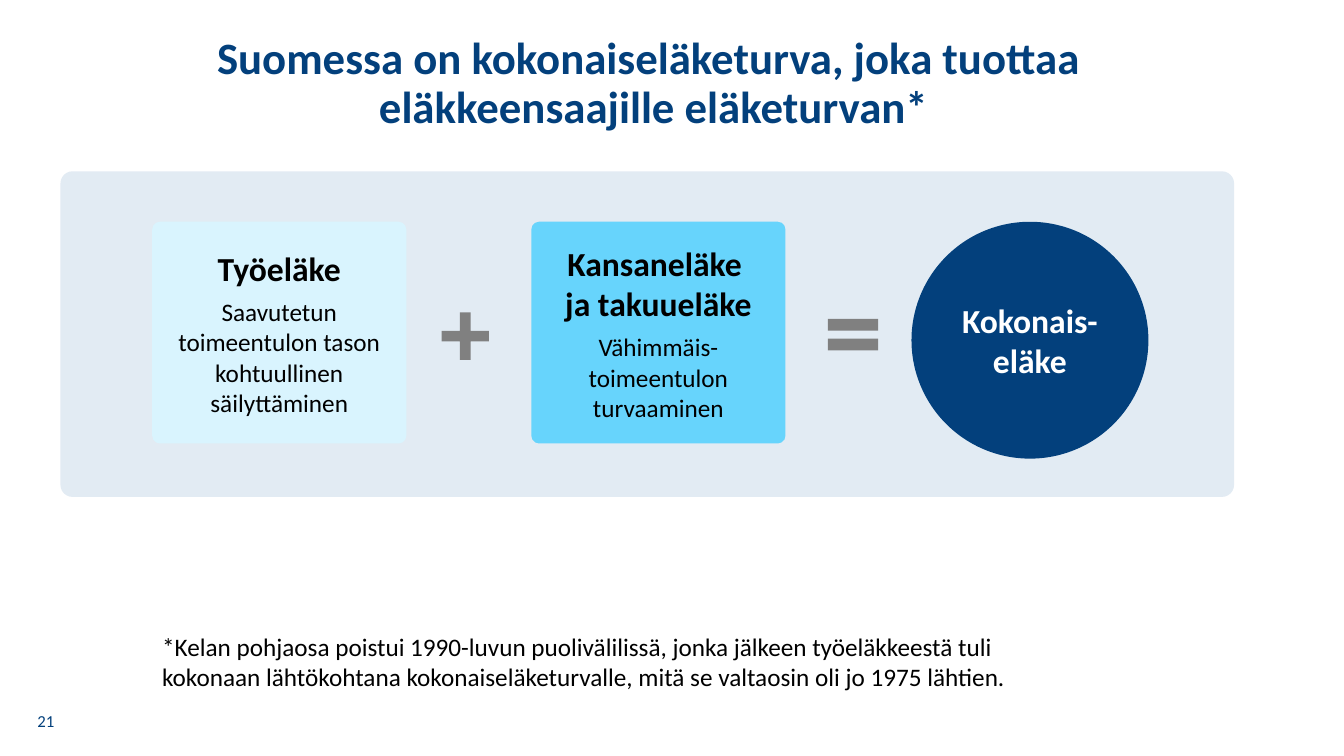
from pptx import Presentation
from pptx import util as u
from pptx.dml.color import RGBColor
from pptx.enum import shapes, text

COLORS = {"navy": "03407C", "panel": "E2EBF3", "pale": "D9F4FE", "sky": "67D4FC",
          "gray": "808080", "black": "000000", "white": "FFFFFF"}
KIND = shapes.MSO_SHAPE
CENTER, LEFT = text.PP_ALIGN.CENTER, text.PP_ALIGN.LEFT
TOP, MIDDLE = text.MSO_ANCHOR.TOP, text.MSO_ANCHOR.MIDDLE

TITLE = "Suomessa on kokonaiseläketurva, joka tuottaa \neläkkeensaajille eläketurvan*"
FOOTNOTE = ("*Kelan pohjaosa poistui 1990-luvun puolivälilissä, jonka jälkeen työeläkkeestä tuli "
            "kokonaan lähtökohtana kokonaiseläketurvalle, mitä se valtaosin oli jo 1975 lähtien.")
PAGE_NUMBER = "21"
PENSIONS = [
    ("Työeläke", "Saavutetun toimeentulon tason kohtuullinen säilyttäminen", "pale"),
    ("Kansaneläke \nja takuueläke", "Vähimmäis-toimeentulon turvaaminen", "sky"),
]
TOTAL = ["Kokonais-", "eläke"]

HEADING = {"size": u.Pt(24), "bold": True}
BODY = {"size": u.Pt(18), "bold": False}
CARD_LEFT, CARD_TOP, CARD_WIDTH, CARD_HEIGHT, CARD_STEP = 1.51, 2.2, 2.52, 2.2, 3.76


def write(shape, paragraphs, color, align=CENTER, anchor=MIDDLE, **spacing):
    """Fill a shape with (wording, font values) paragraphs."""
    frame = shape.text_frame
    frame.word_wrap = True
    frame.vertical_anchor = anchor
    for index, (wording, font_values) in enumerate(paragraphs):
        paragraph = frame.paragraphs[0] if index == 0 else frame.add_paragraph()
        paragraph.text = wording
        paragraph.alignment = align
        for name, value in spacing.items():
            if name != "space_after" or index < len(paragraphs) - 1:
                setattr(paragraph, name, value)
        for run in paragraph.runs:
            run.font.color.rgb = RGBColor.from_string(COLORS[color])
            for name, value in {"name": "Calibri", **font_values}.items():
                setattr(run.font, name, value)


def add_shape(slide, kind, box, color, adjustments=()):
    """Add a flat filled shape without outline."""
    shape = slide.shapes.add_shape(kind, *map(u.Inches, box))
    shape.shadow.inherit = False
    shape.fill.solid()
    shape.fill.fore_color.rgb = RGBColor.from_string(COLORS[color])
    shape.line.fill.background()
    for index, value in enumerate(adjustments):
        shape.adjustments[index] = value
    return shape


def add_text(slide, box, wording, font_values, color, **layout):
    """Add a text box with one paragraph."""
    text_box = slide.shapes.add_textbox(*map(u.Inches, box))
    write(text_box, [(wording, font_values)], color, **layout)


def main():
    """Build and save the slide."""
    presentation = Presentation()
    presentation.slide_width = u.Inches(13.33)
    presentation.slide_height = u.Inches(7.5)
    slide = presentation.slides.add_slide(presentation.slide_layouts[6])

    add_text(slide, (0, 0.31, 12.97, 1.38), TITLE, {"size": u.Pt(32), "bold": True},
             "navy", anchor=TOP, line_spacing=0.9)
    add_text(slide, (0.2, 6.95, 0.51, 0.4), PAGE_NUMBER, {"size": u.Pt(12)}, "navy")
    add_shape(slide, KIND.ROUNDED_RECTANGLE, (0.6, 1.7, 11.64, 3.23), "panel", [0.037])

    for index, (heading, body, color) in enumerate(PENSIONS):
        box = (CARD_LEFT + index * CARD_STEP, CARD_TOP, CARD_WIDTH, CARD_HEIGHT)
        card = add_shape(slide, KIND.ROUNDED_RECTANGLE, box, color, [0.035])
        write(card, [(heading, HEADING), (body, BODY)], "black", space_after=u.Pt(6))

    add_shape(slide, KIND.CROSS, (4.38, 3.1, 0.47, 0.47), "gray", [0.388])
    add_shape(slide, KIND.MATH_EQUAL, (8.12, 2.98, 0.68, 0.68), "gray", [0.172, 0.118])
    total = add_shape(slide, KIND.OVAL, (9.04, CARD_TOP, 2.35, 2.35), "navy")
    write(total, [(line, HEADING) for line in TOTAL], "white")

    add_text(slide, (CARD_LEFT, 6.21, 9.26, 0.71), FOOTNOTE, BODY, "black",
             align=LEFT, anchor=TOP)
    presentation.save("out.pptx")


if __name__ == "__main__":
    main()
